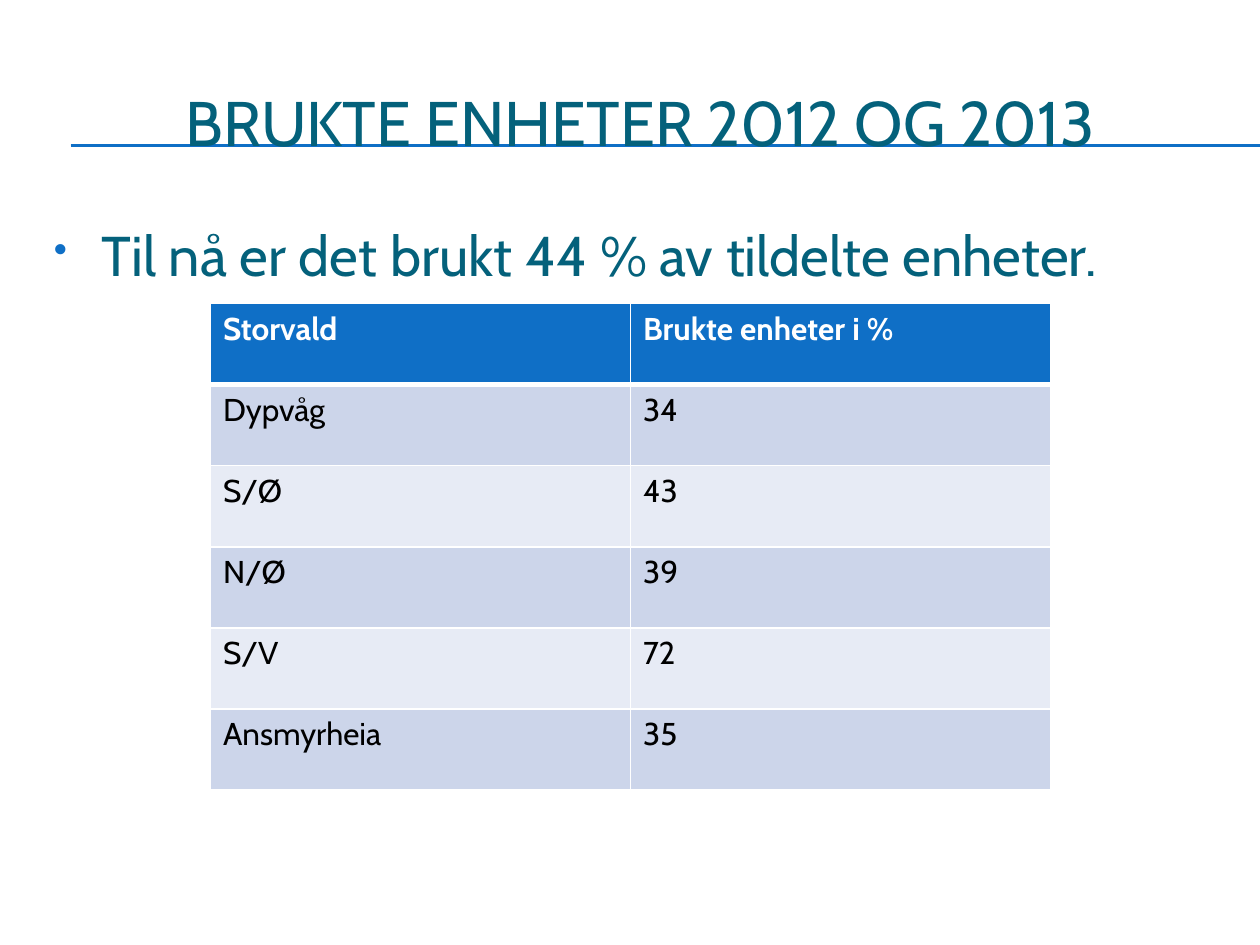
from dataclasses import dataclass

import pptx
import pptx.dml.color
import pptx.enum.shapes
import pptx.enum.text
import pptx.oxml.ns
import pptx.util
from lxml import etree

Inches = pptx.util.Inches
Pt = pptx.util.Pt


@dataclass(frozen=True)
class Theme:
    font: str = "Cabin"
    ink: str = "04617B"
    accent: str = "0F6FC6"
    white: str = "FFFFFF"
    black: str = "000000"
    bands: tuple = ("CCD5EA", "E7EBF5")
    title_size: int = 36
    body_size: int = 32
    table_size: int = 18
    rule_width: float = 0.75
    border: int = 1
    header_border: int = 3


THEME = Theme()
USAGE = [
    ("Storvald", "Brukte enheter i %"),
    ("Dypvåg", "34"),
    ("S/Ø", "43"),
    ("N/Ø", "39"),
    ("S/V", "72"),
    ("Ansmyrheia", "35"),
]


def rgb(color):
    return pptx.dml.color.RGBColor.from_string(color)


def add_child(parent, tag, **attributes):
    child = etree.SubElement(parent, pptx.oxml.ns.qn(tag))
    for name, value in attributes.items():
        child.set(name, str(value))
    return child


def style(paragraph, size, color, bold=False):
    font = paragraph.font
    font.name = THEME.font
    font.size = Pt(size)
    font.bold = bold
    font.color.rgb = rgb(color)


def place(shape, left, top, width, height):
    shape.left, shape.top = Inches(left), Inches(top)
    shape.width, shape.height = Inches(width), Inches(height)


def add_title(slide, left, top, width, height):
    title = slide.shapes.title
    place(title, left, top, width, height)
    frame = title.text_frame
    frame.text = "BRUKTE ENHETER 2012 OG 2013"
    frame.vertical_anchor = pptx.enum.text.MSO_ANCHOR.MIDDLE
    heading = frame.paragraphs[0]
    heading.alignment = pptx.enum.text.PP_ALIGN.CENTER
    style(heading, THEME.title_size, THEME.ink)


def add_title_rules(slide, left, top, width, height):
    """Draw the two close rules that run behind the title."""
    for y in (top, top + height):
        rule = slide.shapes.add_connector(
            pptx.enum.shapes.MSO_CONNECTOR.STRAIGHT,
            Inches(left), Inches(y), Inches(left + width), Inches(y))
        rule.line.color.rgb = rgb(THEME.accent)
        rule.line.width = Pt(THEME.rule_width)
        add_child(rule.element.spPr, "a:effectLst")
        slide.shapes.title.element.addprevious(rule.element)


def add_summary(slide, left, top, width, height):
    summary = slide.shapes.add_textbox(0, 0, 0, 0)
    place(summary, left, top, width, height)
    frame = summary.text_frame
    frame.word_wrap = True
    statement = frame.paragraphs[0]
    statement.text = "Til nå er det brukt 44 % av tildelte enheter."
    style(statement, THEME.body_size, THEME.ink)
    add_bullet(statement, Inches(0.38))


def add_bullet(paragraph, indent):
    properties = paragraph._p.get_or_add_pPr()
    properties.set("marL", str(indent))
    properties.set("indent", str(-indent))
    # Children must stand in schema order, ahead of the font properties.
    font_properties = properties.find(pptx.oxml.ns.qn("a:defRPr"))
    spacing = add_child(properties, "a:spcBef")
    add_child(spacing, "a:spcPct", val=20000)
    color = add_child(properties, "a:buClr")
    add_child(color, "a:srgbClr", val=THEME.accent)
    add_child(properties, "a:buSzPct", val=70000)
    add_child(properties, "a:buChar", char="•")
    if font_properties is not None:
        properties.append(font_properties)


def set_border(cell, side, width):
    properties = cell._tc.get_or_add_tcPr()
    line = add_child(properties, f"a:ln{side}", w=Pt(width))
    fill = add_child(line, "a:solidFill")
    add_child(fill, "a:srgbClr", val=THEME.white)


def add_usage_table(slide, left, top, width, height):
    rows, columns = len(USAGE), len(USAGE[0])
    table = slide.shapes.add_table(
        rows, columns, Inches(left), Inches(top),
        Inches(width), Inches(height)).table
    for r, record in enumerate(USAGE):
        header = r == 0
        background = THEME.accent if header else THEME.bands[(r - 1) % 2]
        ink = THEME.white if header else THEME.black
        for c, value in enumerate(record):
            cell = table.cell(r, c)
            cell.text = value
            style(cell.text_frame.paragraphs[0], THEME.table_size, ink, header)
            for side in "LRTB":
                thick = (r, side) in ((0, "B"), (1, "T"))
                set_border(cell, side,
                           THEME.header_border if thick else THEME.border)
            cell.fill.solid()
            cell.fill.fore_color.rgb = rgb(background)


def build_usage_slide(deck):
    slide = deck.slides.add_slide(deck.slide_layouts[5])
    slide.background.fill.solid()
    slide.background.fill.fore_color.rgb = rgb(THEME.white)
    add_title(slide, 0.33, 0.5, 9.5, 0.92)
    add_title_rules(slide, 0.56, 1.15, 9.44, 0.01)
    add_summary(slide, 0.33, 1.7, 9.5, 4.95)
    add_usage_table(slide, 1.67, 2.41, 6.67, 3.86)


def main():
    deck = pptx.Presentation()
    deck.slide_width, deck.slide_height = Inches(10), Inches(7.5)
    build_usage_slide(deck)
    deck.save("out.pptx")


if __name__ == "__main__":
    main()
